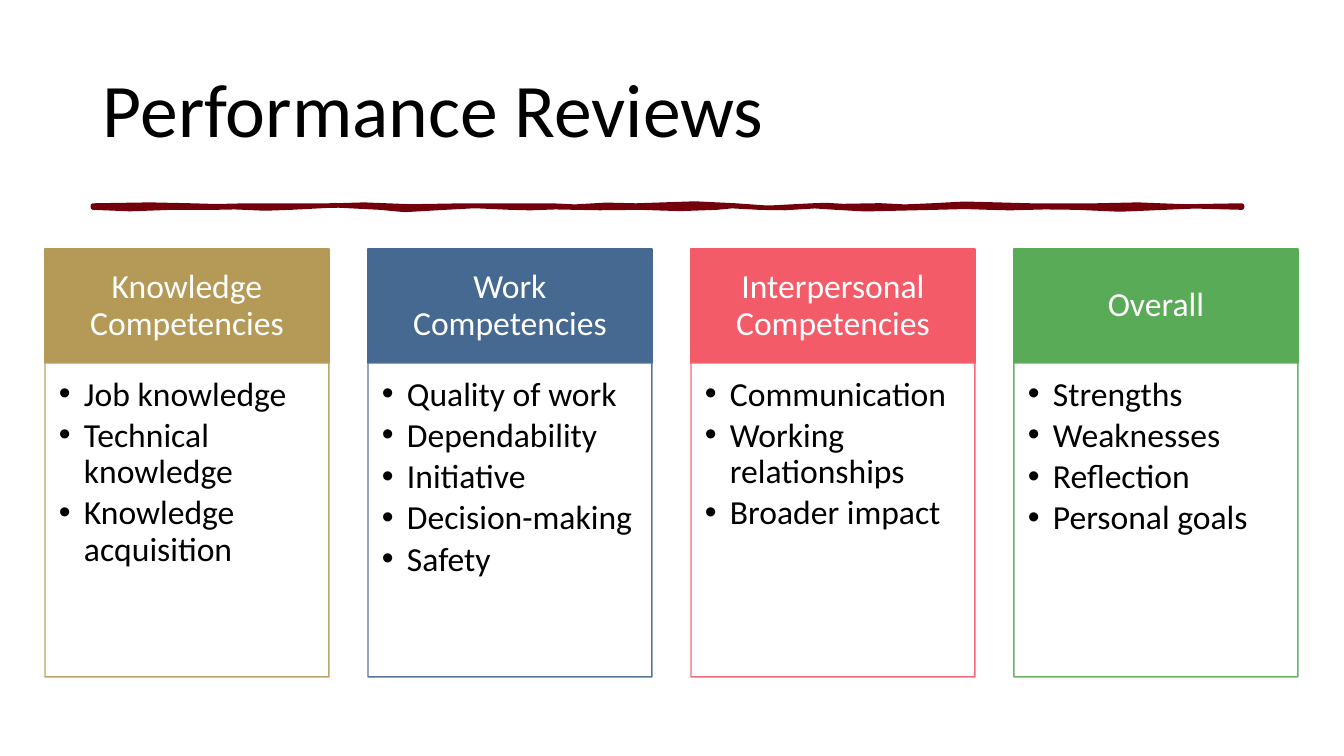
from lxml import etree
from pptx import Presentation
from pptx import util as u
from pptx.dml.color import RGBColor
from pptx.enum import shapes, text
from pptx.oxml.ns import qn

PX = 914400 / 100.8

THEME = {
    "font": "Calibri",
    "title_size": 54,
    "body_size": 24,
    "black": "000000",
    "white": "FFFFFF",
    "rule": "73000A",
    "gold": "B59A57",
    "blue": "456990",
    "coral": "F45B69",
    "green": "5AAB57",
}

COLUMNS = [
    ("Knowledge Competencies", "gold",
     ["Job knowledge", "Technical knowledge", "Knowledge acquisition"]),
    ("Work Competencies", "blue",
     ["Quality of work", "Dependability", "Initiative", "Decision-making", "Safety"]),
    ("Interpersonal Competencies", "coral",
     ["Communication", "Working relationships", "Broader impact"]),
    ("Overall", "green",
     ["Strengths", "Weaknesses", "Reflection", "Personal goals"]),
]
LEFT, PITCH, WIDTH = 45, 323, 284
HEAD_TOP, HEAD_HEIGHT, BODY_HEIGHT = 249, 114, 314

# Hand-drawn rule: x in px, y in tenths of a px
RULE_TOP = [
    (93, 2056), (150, 2047), (192, 2056), (217, 2063), (246, 2056), (334, 2056),
    (364, 2047), (387, 2056), (411, 2065), (464, 2056), (552, 2056), (575, 2067),
    (594, 2056), (606, 2049), (636, 2056), (695, 2036), (736, 2056), (768, 2079),
    (812, 2056), (826, 2051), (843, 2061), (880, 2055), (905, 2067), (931, 2056),
    (965, 2038), (1031, 2056), (1096, 2056), (1138, 2047), (1161, 2056),
    (1185, 2065), (1242, 2056),
]
RULE_BOTTOM = [
    (1242, 2076), (1195, 2063), (1165, 2076), (1120, 2095), (1077, 2076),
    (1045, 2072), (1010, 2081), (989, 2076), (965, 2068), (935, 2076), (865, 2092),
    (836, 2076), (815, 2062), (785, 2080), (759, 2076), (732, 2061), (717, 2076),
    (680, 2089), (640, 2076), (600, 2080), (575, 2076), (555, 2072), (530, 2081),
    (510, 2076), (475, 2060), (445, 2076), (405, 2099), (380, 2076), (335, 2053),
    (291, 2076), (265, 2085), (235, 2072), (215, 2076), (172, 2076), (130, 2091),
    (93, 2076),
]


def paint(sp, fill, line, width):
    sp.shadow.inherit = False
    sp.fill.solid()
    sp.fill.fore_color.rgb = RGBColor.from_string(THEME[fill])
    sp.line.color.rgb = RGBColor.from_string(THEME[line])
    sp.line.width = u.Pt(width)


def write(sp, lines, size, color, align, anchor, insets, after=0, bullet=False):
    """Fill a shape with one paragraph per line; insets are left, top, right, bottom in px."""
    tf = sp.text_frame
    tf.word_wrap = True
    tf.vertical_anchor = anchor
    for side, inset in zip(("left", "top", "right", "bottom"), insets):
        setattr(tf, f"margin_{side}", round(inset * PX))
    for i, line in enumerate(lines):
        p = tf.paragraphs[0] if i == 0 else tf.add_paragraph()
        form = {"alignment": align, "line_spacing": 0.9, "space_after": u.Pt(after)}
        for name, value in form.items():
            setattr(p, name, value)
        if bullet:
            pPr = p._p.get_or_add_pPr()
            pPr.set("marL", str(round(25 * PX)))
            pPr.set("indent", str(round(-25 * PX)))
            etree.SubElement(pPr, qn("a:buFont")).set("typeface", "Arial")
            etree.SubElement(pPr, qn("a:buChar")).set("char", "•")
        r = p.add_run()
        r.text = line
        for name, value in {"name": THEME["font"], "size": u.Pt(THEME[size])}.items():
            setattr(r.font, name, value)
        r.font.color.rgb = RGBColor.from_string(THEME[color])


prs = Presentation()
prs.slide_width, prs.slide_height = round(1344 * PX), round(756 * PX)
s = prs.slides.add_slide(prs.slide_layouts[6])

title = s.shapes.add_textbox(*(round(n * PX) for n in (93, 40, 1159, 146)))
write(title, ["Performance Reviews"], "title_size", "black", text.PP_ALIGN.LEFT,
      text.MSO_ANCHOR.MIDDLE, (10, 5, 10, 5))

outline = s.shapes.build_freeform(*RULE_TOP[0], scale=(PX, PX / 10))
outline.add_line_segments(RULE_TOP[1:] + RULE_BOTTOM, close=True)
paint(outline.convert_to_shape(), "rule", "rule", 3.25)

for i, (heading, color, items) in enumerate(COLUMNS):
    x = LEFT + i * PITCH
    head, body = (
        s.shapes.add_shape(shapes.MSO_SHAPE.RECTANGLE,
                           *(round(n * PX) for n in (x, y, WIDTH, height)))
        for y, height in ((HEAD_TOP, HEAD_HEIGHT), (HEAD_TOP + HEAD_HEIGHT, BODY_HEIGHT))
    )
    paint(head, color, color, 1)
    write(head, [heading], "body_size", "white", text.PP_ALIGN.CENTER,
          text.MSO_ANCHOR.MIDDLE, (19, 11, 19, 11))
    paint(body, "white", color, 1)
    for clr in body._element.spPr.iter(qn("a:srgbClr")):
        etree.SubElement(clr, qn("a:alpha")).set("val", "90000")
    write(body, items, "body_size", "black", text.PP_ALIGN.LEFT,
          text.MSO_ANCHOR.TOP, (14, 14, 19, 21), after=3.6, bullet=True)

prs.save("out.pptx")
